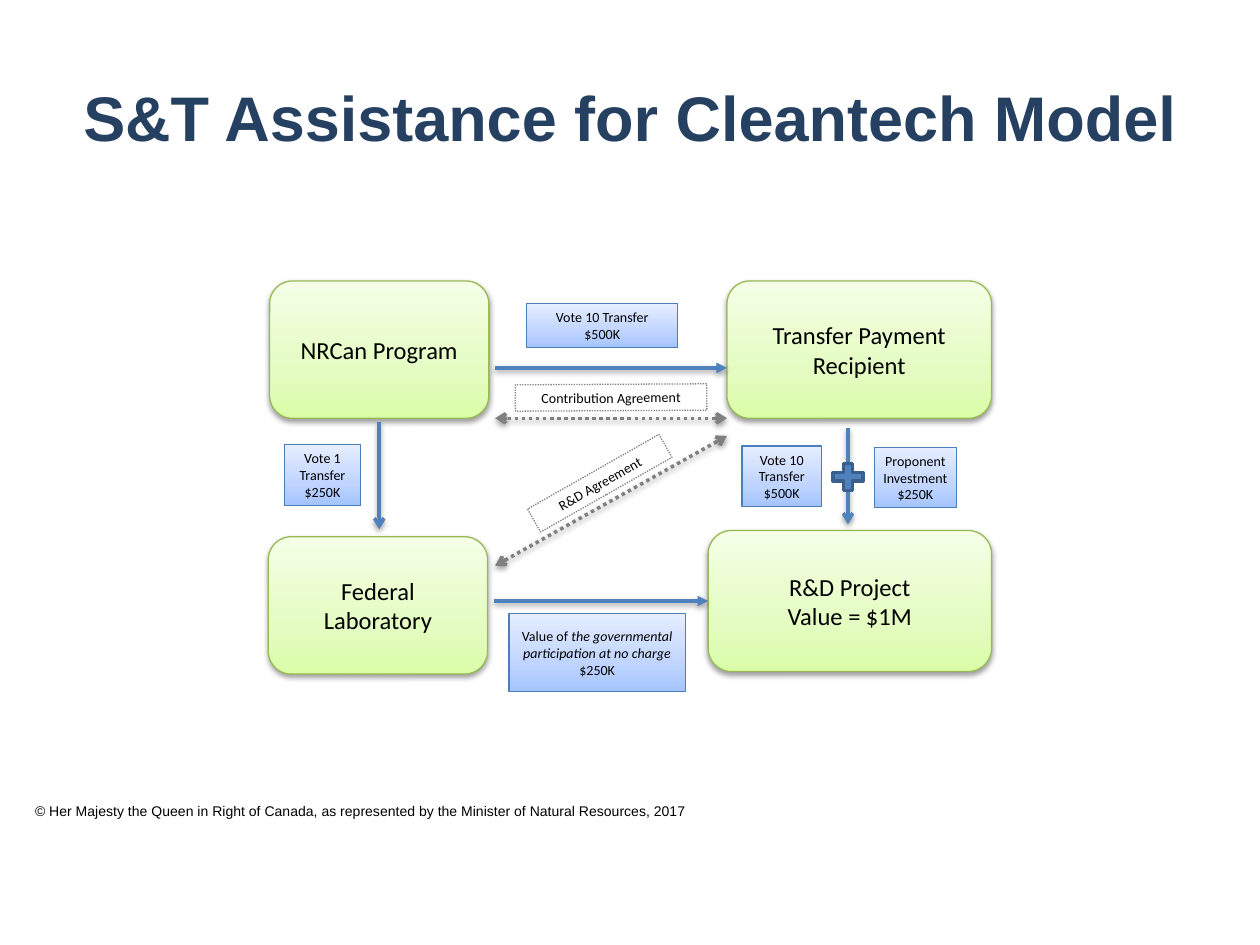
import dataclasses

import lxml.etree
import pptx
import pptx.dml.color
import pptx.enum.dml
import pptx.enum.shapes
import pptx.enum.text
import pptx.oxml.ns
import pptx.util

PX = 9144  # 100 px to the inch
SHAPE = pptx.enum.shapes.MSO_SHAPE
ALIGN = pptx.enum.text.PP_ALIGN
MID = pptx.enum.text.MSO_ANCHOR.MIDDLE
DOTS = pptx.enum.dml.MSO_LINE.ROUND_DOT


@dataclasses.dataclass(frozen=True)
class Theme:
    head: str = "Arial"
    body: str = "Calibri"
    navy: str = "254061"
    black: str = "000000"
    blue: str = "4F81BD"
    gray: str = "808080"
    edge: str = "3A5F8C"
    green_line: str = "98B955"
    blue_line: str = "4B7EBC"
    green: tuple = ("DAFDA7", "E4FCC2", "F5FFE7")
    pale: tuple = ("A4C4FF", "BFD4FF", "E6EEFF")
    title: int = 36
    node: int = 14
    small: int = 8
    thin: float = 0.75
    thick: int = 2


THEME = Theme()


def rgb(code):
    return pptx.dml.color.RGBColor.from_string(code)


def px(*nums):
    return [round(num * PX) for num in nums]


def set_all(item, vals):
    for name, val in vals.items():
        setattr(item, name, val)


def add_tag(root, tag, **vals):
    return lxml.etree.SubElement(root, pptx.oxml.ns.qn(tag), vals)


def write(frame, paras, size, font, color=THEME.black, bold=False,
          align=ALIGN.CENTER, after=0, pad=(10, 5)):
    """Fill a frame; a paragraph is a string or a list of (text, italic)."""
    side, top = px(*pad)
    set_all(frame, dict(word_wrap=True, vertical_anchor=MID, margin_left=side,
                        margin_right=side, margin_top=top, margin_bottom=top))
    for num, parts in enumerate(paras):
        para = frame.add_paragraph() if num else frame.paragraphs[0]
        set_all(para, dict(alignment=align, space_after=pptx.util.Pt(after)))
        for text, slant in [(parts, False)] if isinstance(parts, str) else parts:
            run = para.add_run()
            run.text = text
            set_all(run.font, dict(size=pptx.util.Pt(size), name=font,
                                   bold=bold, italic=slant))
            run.font.color.rgb = rgb(color)


def stroke(line, color, width, dash=None):
    line.color.rgb = rgb(color)
    set_all(line, dict(width=pptx.util.Pt(width), dash_style=dash))


def shade(fill, stops):
    """Blend three colours from the bottom up."""
    fill.gradient()
    fill.gradient_angle = 90
    grad = fill._xPr.find(pptx.oxml.ns.qn("a:gradFill"))
    stop_list = grad.find(pptx.oxml.ns.qn("a:gsLst"))
    stop_list.clear()
    for spot, code in zip((0, 35000, 100000), stops):
        add_tag(add_tag(stop_list, "a:gs", pos=str(spot)), "a:srgbClr", val=code)


def cast(effects):
    """Put a soft shadow below."""
    outer = add_tag(effects, "a:outerShdw", blurRad="40000", dist="20000",
                    dir="5400000", rotWithShape="0")
    color = add_tag(outer, "a:srgbClr", val=THEME.black)
    add_tag(color, "a:alpha", val="38000")


def add_box(slide, kind, box):
    shape = slide.shapes.add_shape(kind, *px(*box))
    shape.shadow.inherit = False
    return shape


def add_node(slide, box, paras):
    shape = add_box(slide, SHAPE.ROUNDED_RECTANGLE, box)
    shade(shape.fill, THEME.green)
    stroke(shape.line, THEME.green_line, THEME.thin)
    cast(shape._element.spPr.find(pptx.oxml.ns.qn("a:effectLst")))
    write(shape.text_frame, paras, THEME.node, THEME.body)
    return shape


def add_label(slide, box, paras, after=6, side=10):
    shape = add_box(slide, SHAPE.RECTANGLE, box)
    shade(shape.fill, THEME.pale)
    stroke(shape.line, THEME.blue_line, THEME.thin)
    write(shape.text_frame, paras, THEME.small, THEME.body,
          after=after, pad=(side, 4))


def add_deal(slide, box, text, turn):
    """Add a dotted agreement tag at an angle."""
    shape = add_box(slide, SHAPE.RECTANGLE, box)
    shape.rotation = turn
    shape.fill.background()
    stroke(shape.line, THEME.gray, THEME.thin, DOTS)
    write(shape.text_frame, [text], THEME.small, THEME.body, after=6, pad=(10, 4))


def add_plus(slide, box):
    shape = add_box(slide, SHAPE.MATH_PLUS, box)
    shape.fill.solid()
    shape.fill.fore_color.rgb = rgb(THEME.blue)
    stroke(shape.line, THEME.edge, THEME.thick)


def add_arrow(slide, ends, tip="arrow", both=False):
    """Add a blue arrow, or a gray dotted one with two heads."""
    line = slide.shapes.add_connector(
        pptx.enum.shapes.MSO_CONNECTOR.STRAIGHT, *px(*ends))
    stroke(line.line, THEME.gray if both else THEME.blue, THEME.thick,
           DOTS if both else None)
    root = line.line._get_or_add_ln()
    for tag in ("a:headEnd", "a:tailEnd") if both else ("a:tailEnd",):
        add_tag(root, tag, type=tip)
    cast(add_tag(line._element.spPr, "a:effectLst"))
    return line


def add_title(slide, box, text):
    title = slide.shapes.title
    set_all(title, dict(zip(("left", "top", "width", "height"), px(*box))))
    write(title.text_frame, [text], THEME.title, THEME.head, THEME.navy, bold=True)


def add_flow(slide, left, top):
    """Draw the funding flow from its top left corner."""
    def at(x, y, wide, high):
        return left + x, top + y, wide, high

    def span(x1, y1, x2, y2):
        return left + x1, top + y1, left + x2, top + y2

    add_node(slide, at(1, 0, 174, 109), ["NRCan Program"])
    add_node(slide, at(364, 0, 210, 109), ["Transfer Payment Recipient"])
    add_node(slide, at(0, 203, 174, 109), ["Federal Laboratory"])
    work = add_node(slide, at(349, 198, 225, 112), ["R&D Project", "Value = $1M"])

    add_arrow(slide, span(88, 112, 88, 197))
    add_arrow(slide, span(460, 117, 460, 193))
    add_arrow(slide, span(364, 123, 180, 226), both=True)
    add_arrow(slide, span(364, 109, 180, 109), both=True)
    add_arrow(slide, span(180, 69, 364, 69), "triangle")
    add_arrow(slide, span(179, 254, 349, 254), "triangle").end_connect(work, 1)

    add_label(slide, at(205, 18, 120, 35), ["Vote 10 Transfer $500K"])
    add_label(slide, at(13, 130, 60, 48), ["Vote 1 Transfer $250K"])
    add_label(slide, at(376, 131, 63, 48), ["Vote 10 Transfer $500K"])
    add_label(slide, at(481, 132, 65, 48), ["Proponent Investment $250K"], side=0)
    add_label(slide, at(191, 264, 140, 62), [
        [("Value of ", False), ("the governmental participation at no charge", True)],
        "$250K"], after=0)
    add_plus(slide, at(444, 141, 32, 29))
    add_deal(slide, at(203, 150, 120, 21), "R&D Agreement", 330.4)
    add_deal(slide, at(196, 82, 152, 21), "Contribution Agreement", 359.7)


def add_foot(slide, box, text):
    note = slide.shapes.add_textbox(*px(*box))
    write(note.text_frame, [text], THEME.small, THEME.head, align=ALIGN.LEFT)
    note.text_frame.vertical_anchor = pptx.enum.text.MSO_ANCHOR.TOP


def main():
    deck = pptx.Presentation()
    deck.slide_width, deck.slide_height = px(1000, 750)
    slide = deck.slides.add_slide(deck.slide_layouts[5])
    add_title(slide, (50, 30, 900, 125), "S&T Assistance for Cleantech Model")
    add_flow(slide, 213, 223)
    add_foot(slide, (18, 632, 544, 37),
             "© Her Majesty the Queen in Right of Canada, as represented by "
             "the Minister of Natural Resources, 2017")
    deck.save("out.pptx")


if __name__ == "__main__":
    main()
